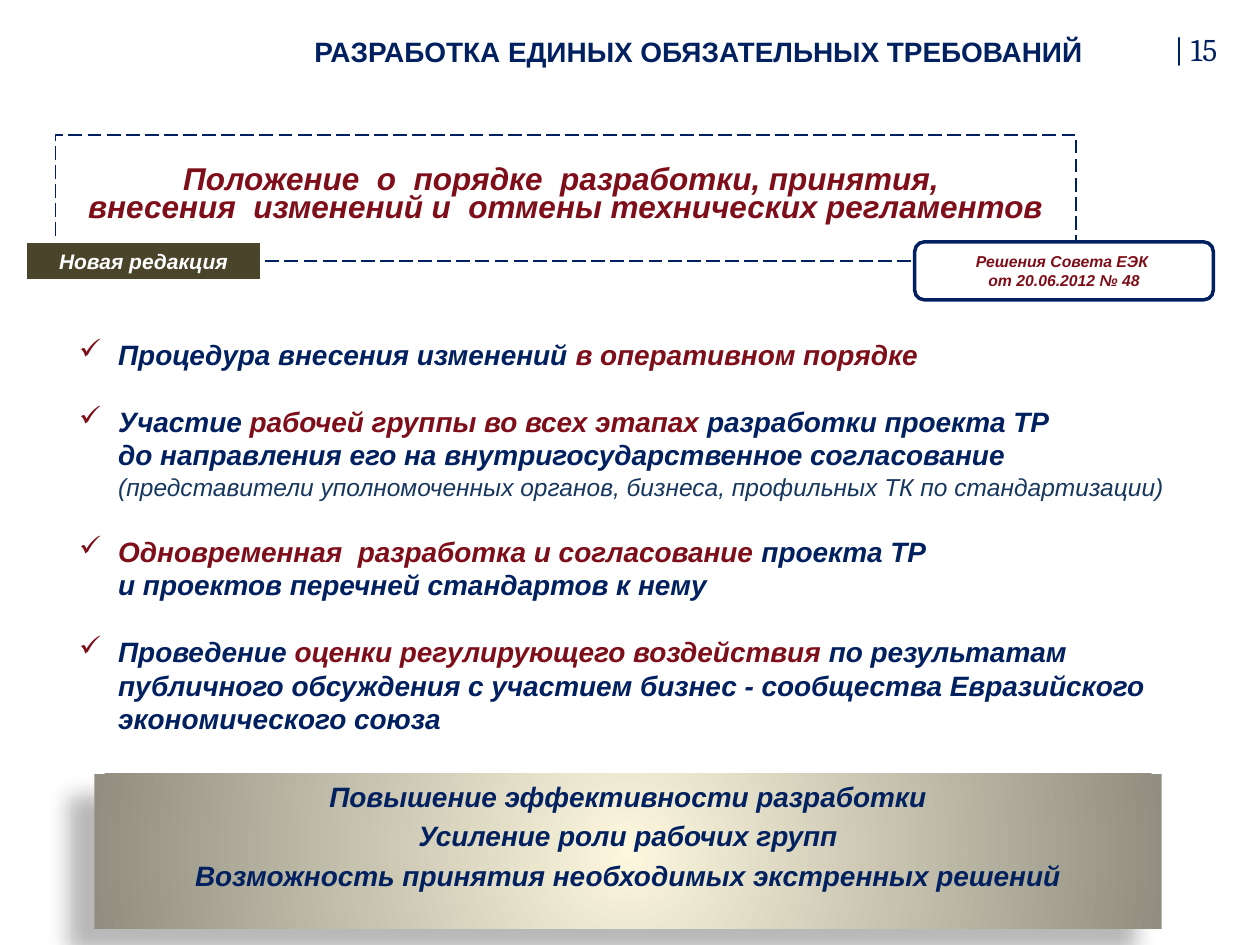
"""Build a slide on the new procedure for drafting technical rules."""
from copy import deepcopy

from lxml import etree
from pptx import Presentation
from pptx import util as u
from pptx.dml.color import RGBColor
from pptx.enum import dml, shapes, text
from pptx.oxml import ns, parse_xml

NAVY = RGBColor(0x00, 0x20, 0x60)
WINE = RGBColor(0x7E, 0x0E, 0x19)
SLATE = RGBColor(0x17, 0x37, 0x5E)
OLIVE = RGBColor(0x4A, 0x45, 0x2A)
WHITE = RGBColor(0xFF, 0xFF, 0xFF)

CELL = u.Inches(0.1)
COLS, ROWS = 100, 75
TOP, MID = text.MSO_ANCHOR.TOP, text.MSO_ANCHOR.MIDDLE
LEFT, MIDST = text.PP_ALIGN.LEFT, text.PP_ALIGN.CENTER
RECT = shapes.MSO_SHAPE.RECTANGLE
ROUND = shapes.MSO_SHAPE.ROUNDED_RECTANGLE
BOLD = {"name": "Arial", "bold": True, "italic": True}

GLOW = f"""<a:gradFill {ns.nsdecls('a')} rotWithShape="1"><a:gsLst>
<a:gs pos="0"><a:srgbClr val="FCF7DD"/></a:gs>
<a:gs pos="100000"><a:srgbClr val="918E81"/></a:gs></a:gsLst>
<a:path path="circle"><a:fillToRect l="50000" t="50000" r="50000" b="50000"/></a:path>
</a:gradFill>"""
SHADE = f"""<a:effectLst {ns.nsdecls('a')}>
<a:outerShdw blurRad="{u.Pt(11.8)}" dist="{u.Pt(19.7)}" dir="8460000" algn="tr" rotWithShape="0">
<a:srgbClr val="000000"><a:alpha val="28000"/></a:srgbClr></a:outerShdw></a:effectLst>"""


def put(item, traits):
    """Set each trait of an item."""
    for key, val in traits.items():
        setattr(item, key, val)


def part(box, col, row, wide, high):
    """Return a box placed by cells from the corner of another."""
    return box[0] + col, box[1] + row, wide, high


def span(box):
    """Turn a box in cells into lengths."""
    return [u.Emu(round(n * CELL)) for n in box]


def write(para, words, size, ink, face=BOLD):
    """Add a run of text, breaking it at line ends."""
    for num, line in enumerate(words.split("\n")):
        if num:
            para.add_line_break()
            para._p[-1].append(deepcopy(run._r.rPr))
        run = para.add_run()
        run.text = line
        put(run.font, {**face, "size": u.Pt(size)})
        run.font.color.rgb = ink


def block(slide, box, kind=RECT, fill=None, line=None, width=1, anchor=TOP):
    """Add a shape ready to hold text."""
    shape = slide.shapes.add_shape(kind, *span(box))
    shape.shadow.inherit = False
    for paint, ink in ((shape.fill, fill), (shape.line.fill, line)):
        if ink is None:
            paint.background()
        else:
            paint.solid()
            paint.fore_color.rgb = ink
    if line is not None:
        shape.line.width = u.Pt(width)
    put(shape.text_frame, {"word_wrap": True, "vertical_anchor": anchor})
    shape.text_frame.paragraphs[0].alignment = MIDST
    return shape


def head(slide, box):
    """Place the title and the page mark."""
    title = slide.shapes.title
    put(title, dict(zip(("left", "top", "width", "height"),
                        span(part(box, 13.4, 1, 84.7, 6.1)))))
    put(title.text_frame, {"word_wrap": True, "vertical_anchor": MID,
                           "auto_size": text.MSO_AUTO_SIZE.NONE})
    para = title.text_frame.paragraphs[0]
    para.alignment = MIDST
    write(para, "РАЗРАБОТКА ЕДИНЫХ ОБЯЗАТЕЛЬНЫХ ТРЕБОВАНИЙ ", 16, NAVY,
          {"name": "Arial", "bold": True})
    mark = slide.shapes.add_textbox(*span(part(box, 92.2, 1.9, 6.7, 4.2)))
    mark.text_frame.word_wrap = True
    write(mark.text_frame.paragraphs[0], "| 15", 18, NAVY, {"name": "Cambria"})


def rule(slide, box):
    """Place the dashed frame with its two labels."""
    frame = block(slide, part(box, 2.3, 0, 81, 10), line=NAVY)
    frame.line.dash_style = dml.MSO_LINE.LONG_DASH
    frame.text_frame.margin_top = u.Inches(0.27)
    para = frame.text_frame.paragraphs[0]
    para.line_spacing = u.Pt(16)
    write(para, "Положение  о  порядке  разработки, принятия, \n"
          "внесения  изменений и  отмены технических регламентов", 18, WINE)
    act = block(slide, part(box, 70.5, 8.5, 23.7, 4.6), ROUND, WHITE, NAVY, 2, MID)
    write(act.text_frame.paragraphs[0],
          "Решения Совета ЕЭК \nот 20.06.2012 № 48", 9, WINE)
    tag = block(slide, part(box, 0, 8.5, 18.6, 3), RECT, OLIVE, WHITE, 0.75)
    write(tag.text_frame.paragraphs[0], "Новая редакция", 12, WHITE)


def tick(para):
    """Give a paragraph a check mark and a hanging indent."""
    props = para._p.get_or_add_pPr()
    put_in = u.Inches(0.31)
    props.set("marL", str(put_in))
    props.set("indent", str(-put_in))
    ink = etree.SubElement(props, ns.qn("a:buClr"))
    etree.SubElement(ink, ns.qn("a:srgbClr"), val=str(WINE))
    etree.SubElement(props, ns.qn("a:buChar"), char="✓")


def points(slide, box):
    """Place the list of changes."""
    rows = [
        [("Процедура внесения изменений ", NAVY), ("в оперативном порядке", WINE)],
        [("Участие ", NAVY), ("рабочей группы во всех этапах", WINE),
         (" разработки проекта ТР\nдо направления его на "
          "внутригосударственное согласование ", NAVY),
         ("(представители уполномоченных органов, бизнеса, "
          "профильных ТК по стандартизации)", SLATE)],
        [("Одновременная  разработка и согласование", WINE),
         (" проекта ТР\nи проектов перечней стандартов к нему", NAVY)],
        [("Проведение ", NAVY), ("оценки регулирующего воздействия ", WINE),
         ("по результатам публичного обсуждения с участием бизнес - сообщества "
          "Евразийского экономического союза", NAVY)],
    ]
    frame = slide.shapes.add_textbox(*span(box)).text_frame
    frame.word_wrap = True
    for num, row in enumerate(rows):
        para = frame.add_paragraph() if num else frame.paragraphs[0]
        tick(para)
        para.alignment = LEFT
        if num:
            para.space_before = u.Pt(19)
        for words, ink in row:
            note = ink == SLATE
            write(para, words, 14 if note else 16, ink, {**BOLD, "bold": not note})


def goals(slide, box):
    """Place the shaded panel of results."""
    panel = block(slide, box)
    props = panel._element.spPr
    props.replace(props.find(ns.qn("a:noFill")), parse_xml(GLOW))
    props.replace(props.find(ns.qn("a:effectLst")), parse_xml(SHADE))
    frame = panel.text_frame
    for num, words in enumerate((
            "Повышение эффективности разработки",
            "Усиление роли рабочих групп",
            "Возможность принятия необходимых экстренных решений")):
        para = frame.add_paragraph() if num else frame.paragraphs[0]
        para.alignment = MIDST
        if num:
            para.space_before = u.Pt(3.2)
        write(para, words, 16, NAVY)


def main():
    """Build and save the slide."""
    deck = Presentation()
    put(deck, {"slide_width": COLS * CELL, "slide_height": ROWS * CELL})
    slide = deck.slides.add_slide(deck.slide_layouts[5])
    head(slide, (0, 0, COLS, 8))
    rule(slide, (2.1, 10.7, 94.2, 13.1))
    points(slide, (5.3, 26.3, 89.5, 33))
    goals(slide, (7.5, 61.4, 84.7, 12.3))
    deck.save("out.pptx")


if __name__ == "__main__":
    main()
